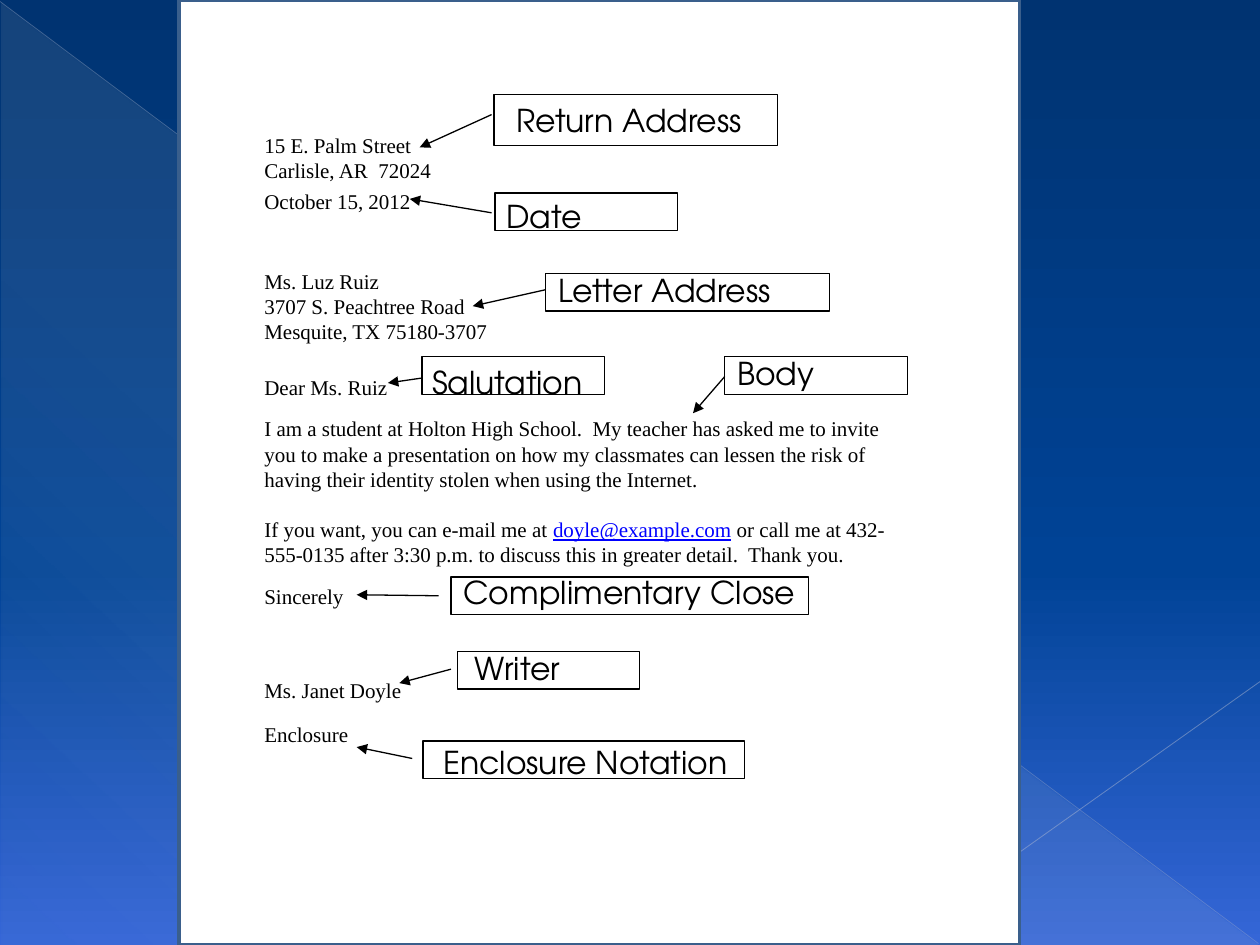
import pptx
import pptx.dml.color
import pptx.enum.shapes
import pptx.enum.text
import pptx.oxml
import pptx.oxml.ns
import pptx.util
from lxml import etree

Cm = pptx.util.Cm
Pt = pptx.util.Pt
RGBColor = pptx.dml.color.RGBColor
qn = pptx.oxml.ns.qn
SHAPES = pptx.enum.shapes.MSO_SHAPE

WHITE = RGBColor(0xFF, 0xFF, 0xFF)
BLACK = RGBColor(0x00, 0x00, 0x00)
LINK_BLUE = RGBColor(0x00, 0x00, 0xFF)
FRAME_BLUE = RGBColor(0x3A, 0x5F, 0x8C)
NIGHT_BLUE = RGBColor(0x00, 0x33, 0x71)
DEEP_BLUE = RGBColor(0x00, 0x43, 0x96)
BRIGHT_BLUE = RGBColor(0x35, 0x66, 0xD7)
CREAM = RGBColor(0xEE, 0xEC, 0xE1)
LONG_RAY = RGBColor(0xAD, 0xB6, 0xCE)
SHORT_RAY = RGBColor(0xB6, 0xBE, 0xD3)

LETTER_FORMAT = {"name": "Times New Roman", "size": Pt(12)}
LABEL_FORMAT = {"name": "TeX Gyre Adventor", "size": Pt(18)}
LETTER_LEFT = 5.08

LETTER_PARTS = [
    (2.54, 4.45, 1.27, ["15 E. Palm Street", "Carlisle, AR  72024"]),
    (3.68, 3.61, 0.76, ["October 15, 2012"]),
    (5.28, 5.08, 1.8, ["Ms. Luz Ruiz", "3707 S. Peachtree Road", "Mesquite, TX 75180-3707"]),
    (7.42, 3.18, 0.76, ["Dear Ms. Ruiz"]),
    (11.63, 2.34, 0.76, ["Sincerely"]),
    (13.54, 3.38, 0.76, ["Ms. Janet Doyle"]),
    (14.43, 2.54, 0.76, ["Enclosure"]),
]
BODY_OPENING = (
    "I am a student at Holton High School.  My teacher has asked me to invite "
    "you to make a presentation on how my classmates can lessen the risk of "
    "having their identity stolen when using the Internet."
)
BODY_REQUEST = "If you want, you can e-mail me at "
BODY_EMAIL = "doyle@example.com"
BODY_THANKS = (
    " or call me at 432-555-0135 after 3:30 p.m. to discuss this in greater "
    "detail.  Thank you."
)

CALLOUTS = [
    ("Return Address", (9.96, 1.91, 5.72, 1.02), (9.91, 2.31, 8.46, 2.97), (10.16, 1.91, 5.51)),
    ("Date", (9.98, 3.89, 3.68, 0.76), (9.91, 4.29, 8.26, 4.01), (9.96, 3.84, 4.65)),
    ("Letter Address", (11, 5.51, 5.72, 0.76), (11, 5.84, 9.53, 6.17), (11, 5.33, 5.72)),
    ("Salutation", (8.51, 7.19, 3.68, 0.76), (8.51, 7.62, 7.82, 7.72), (8.46, 7.19, 4.65)),
    ("Body", (14.61, 7.19, 3.68, 0.76), (14.61, 7.59, 13.97, 8.33), (14.61, 7.01, 4.65)),
    ("Complimentary Close", (9.09, 11.63, 7.21, 0.76), (8.84, 12.01, 7.19, 11.99), (9.09, 11.43, 7.42)),
    ("Writer", (9.22, 13.13, 3.68, 0.76), (9.09, 13.49, 8.05, 13.77), (9.32, 12.95, 4.65)),
    ("Enclosure Notation", (8.53, 14.94, 6.48, 0.76), (8.31, 15.29, 7.19, 15.06), (8.69, 14.86, 8.89)),
]


def lengths(values):
    return [Cm(value) for value in values]


def apply_format(target, values):
    for name, value in values.items():
        setattr(target, name, value)


def set_opacity(color, percent):
    etree.SubElement(color, qn("a:alpha"), val=str(percent * 1000))


def paint_gradient(fill, element, stops, angle):
    fill.gradient()
    gradient = next(element.iter(qn("a:gradFill")))
    stop_list = gradient.find(qn("a:gsLst"))
    for stop in list(stop_list):
        stop_list.remove(stop)
    for position, rgb, opacity in stops:
        stop = etree.SubElement(stop_list, qn("a:gs"), pos=str(position * 1000))
        set_opacity(etree.SubElement(stop, qn("a:srgbClr"), val=str(rgb)), opacity)
    gradient.find(qn("a:lin")).set("ang", str(angle * 60000))


def add_box(slide, bounds, line_color, line_width):
    shape = slide.shapes.add_shape(SHAPES.RECTANGLE, *lengths(bounds))
    shape.shadow.inherit = False
    shape.fill.solid()
    shape.fill.fore_color.rgb = WHITE
    shape.line.color.rgb = line_color
    shape.line.width = Pt(line_width)


def add_line(slide, ends, color, width, opacity=100, arrow=False):
    connector = slide.shapes.add_connector(
        pptx.enum.shapes.MSO_CONNECTOR.STRAIGHT, *lengths(ends))
    connector.line.color.rgb = color
    connector.line.width = Pt(width)
    properties = connector.element.spPr
    if opacity < 100:
        set_opacity(next(properties.iter(qn("a:srgbClr"))), opacity)
    if arrow:
        etree.SubElement(properties.find(qn("a:ln")), qn("a:tailEnd"), type="triangle")
    etree.SubElement(properties, qn("a:effectLst"))


def add_run(paragraph, text, values, color=BLACK):
    run = paragraph.add_run()
    run.text = text
    apply_format(run.font, values)
    run.font.color.rgb = color


def add_text(slide, bounds, lines, values, paragraph_format):
    frame = slide.shapes.add_textbox(*lengths(bounds)).text_frame
    frame.word_wrap = True
    for index, line in enumerate(lines):
        paragraph = frame.add_paragraph() if index else frame.paragraphs[0]
        apply_format(paragraph, paragraph_format)
        add_run(paragraph, line, values)
    return frame


def add_backdrop(slide):
    paint_gradient(slide.background.fill, slide.element,
                   [(0, NIGHT_BLUE, 100), (60, DEEP_BLUE, 100), (100, BRIGHT_BLUE, 100)], 90)
    triangle = slide.shapes.add_shape(
        SHAPES.RIGHT_TRIANGLE, *lengths((0.03, 0.05, 25.35, 19)))
    triangle.shadow.inherit = False
    triangle.line.fill.background()
    paint_gradient(triangle.fill, triangle.element,
                   [(0, CREAM, 10), (70, CREAM, 8), (100, CREAM, 1)], 133)
    add_line(slide, (0, 0.03, 25.37, 19.02), LONG_RAY, 0.39, opacity=35)
    add_line(slide, (25.4, 13.74, 17.96, 19.02), SHORT_RAY, 0.47, opacity=45)


def add_letter(slide):
    add_box(slide, (3.61, 0, 16.94, 19.05), FRAME_BLUE, 2)
    spacing = {"line_spacing": Pt(14.4)}
    for top, width, height, lines in LETTER_PARTS:
        add_text(slide, (LETTER_LEFT, top, width, height), lines, LETTER_FORMAT, spacing)
    body = add_text(slide, (LETTER_LEFT, 8.26, 13.54, 3.84),
                    [BODY_OPENING, BODY_REQUEST], LETTER_FORMAT, spacing)
    request = body.paragraphs[1]
    request.space_before = Pt(14.4)
    add_run(request, BODY_EMAIL, {**LETTER_FORMAT, "underline": True}, LINK_BLUE)
    add_run(request, BODY_THANKS, LETTER_FORMAT)


def add_callout(slide, label, box, arrow, text_place):
    add_box(slide, box, BLACK, 0.75)
    add_line(slide, arrow, BLACK, 0.75, arrow=True)
    add_text(slide, (*text_place, 1.02), [label], LABEL_FORMAT, {})


def main():
    presentation = pptx.Presentation()
    apply_format(presentation, {"slide_width": Cm(25.4), "slide_height": Cm(19.05)})
    slide = presentation.slides.add_slide(presentation.slide_layouts[6])
    add_backdrop(slide)
    add_letter(slide)
    for callout in CALLOUTS:
        add_callout(slide, *callout)
    presentation.save("out.pptx")


if __name__ == "__main__":
    main()
